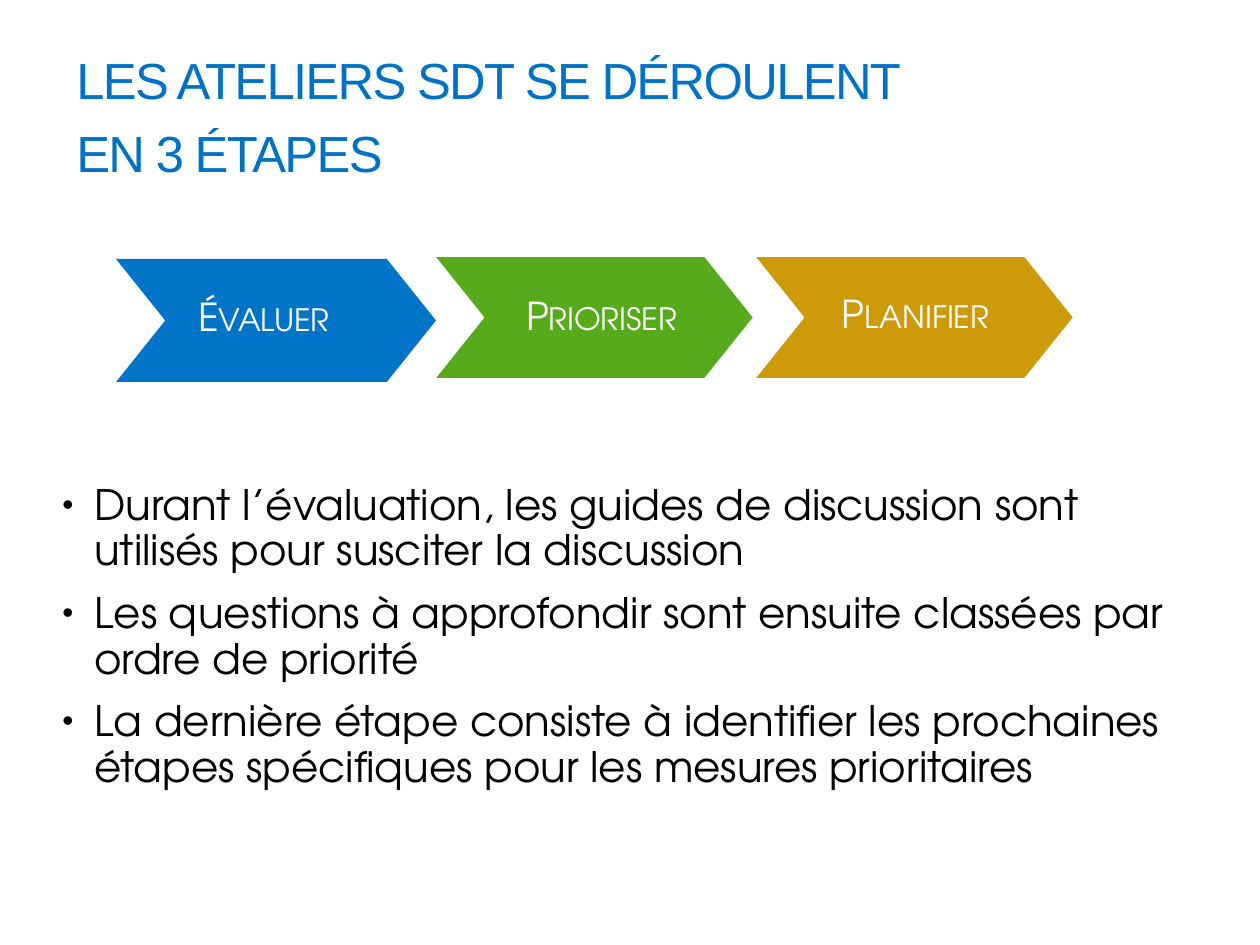
from lxml.etree import SubElement
from pptx import Presentation
from pptx.dml.color import RGBColor
from pptx.enum.shapes import MSO_SHAPE
from pptx.enum.text import MSO_ANCHOR, PP_ALIGN
from pptx.oxml.ns import qn
from pptx.util import Emu, Pt

EMU_PER_PX = 914400 / 126
BODY_FONT = "TeX Gyre Adventor"


def px(length):
    return Emu(round(length * EMU_PER_PX))


def color(code):
    return RGBColor.from_string(code)


class SlideBuilder:
    """Holds the text styles and the current slide."""

    styles = {
        "title": {
            "font": {"name": "Arial", "size": Pt(29)}, "color": "0072C6",
            "para": {"line_spacing": 1.2}, "run": {"spc": "-100"},
            "frame": {"vertical_anchor": MSO_ANCHOR.MIDDLE},
        },
        "body": {
            "font": {"name": BODY_FONT, "size": Pt(24)}, "color": "000000",
            "para": {"line_spacing": 0.9}, "run": {},
            "frame": {"vertical_anchor": MSO_ANCHOR.TOP},
            "gap": Pt(10), "bullet": "•",
        },
        "label": {
            "font": {"name": BODY_FONT, "size": Pt(22)}, "color": "FFFFFF",
            "para": {"line_spacing": 0.9, "alignment": PP_ALIGN.CENTER},
            "run": {"cap": "small"},
            "frame": {"vertical_anchor": MSO_ANCHOR.MIDDLE,
                      **{f"margin_{side}": px(21)
                         for side in ("left", "top", "right", "bottom")}},
        },
    }

    def __init__(self, page):
        self.page = page

    def apply(self, target, values):
        for name, value in values.items():
            setattr(target, name, value)

    def bullet(self, para, symbol):
        settings = para._p.get_or_add_pPr()
        settings.set("marL", str(px(32)))
        settings.set("indent", str(-px(32)))
        SubElement(settings, qn("a:buSzPct")).set("val", "75000")
        SubElement(settings, qn("a:buFont")).set("typeface", "Arial")
        SubElement(settings, qn("a:buChar")).set("char", symbol)

    def text(self, lines, style_name, left, top, width, height):
        style = self.styles[style_name]
        box = self.page.shapes.add_textbox(px(left), px(top), px(width), px(height))
        frame = box.text_frame
        frame.word_wrap = True
        self.apply(frame, style["frame"])
        for index, line in enumerate(lines):
            para = frame.add_paragraph() if index else frame.paragraphs[0]
            if "bullet" in style:
                self.bullet(para, style["bullet"])
            self.apply(para, style["para"])
            if index and "gap" in style:
                para.space_before = style["gap"]
            span = para.add_run()
            span.text = line
            self.apply(span.font, style["font"])
            span.font.color.rgb = color(style["color"])
            for name, value in style["run"].items():
                span._r.get_or_add_rPr().set(name, value)

    def chevron(self, fill, outlined, left, top, width, height):
        arrow = self.page.shapes.add_shape(
            MSO_SHAPE.CHEVRON, px(left), px(top), px(width), px(height))
        arrow.adjustments[0] = 0.4
        arrow.shadow.inherit = False
        arrow.fill.solid()
        arrow.fill.fore_color.rgb = color(fill)
        if outlined:
            arrow.line.color.rgb = color("FFFFFF")
            arrow.line.width = Pt(1)
        else:
            arrow.line.fill.background()


def main():
    deck = Presentation()
    deck.slide_width, deck.slide_height = px(1260), px(945)
    page = deck.slides.add_slide(deck.slide_layouts[6])
    builder = SlideBuilder(page)

    # Explanation of the steps
    builder.text([
        "Durant l’évaluation, les guides de discussion sont utilisés pour susciter la discussion",
        "Les questions à approfondir sont ensuite classées par ordre de priorité",
        "La dernière étape consiste à identifier les prochaines étapes spécifiques "
        "pour les mesures prioritaires",
    ], "body", 50, 478, 1159, 344)

    # Title
    builder.text(["LES ATELIERS SDT SE DÉROULENT", "EN 3 ÉTAPES"],
                 "title", 64, 42, 1159, 136)

    # Three steps: name, fill, outlined, chevron corner, label place
    steps = [
        ("Évaluer", "0074C6", False, (116, 259), (164, 267, 200, 105)),
        ("Prioriser", "56AA1C", True, (434, 256), (470, 260, 263, 116)),
        ("Planifier", "CD9A09", True, (754, 256), (818, 258, 195, 116)),
    ]
    for name, fill, outlined, corner, place in steps:
        builder.chevron(fill, outlined, *corner, 320, 123)
        builder.text([name], "label", *place)

    deck.save("out.pptx")


if __name__ == "__main__":
    main()
